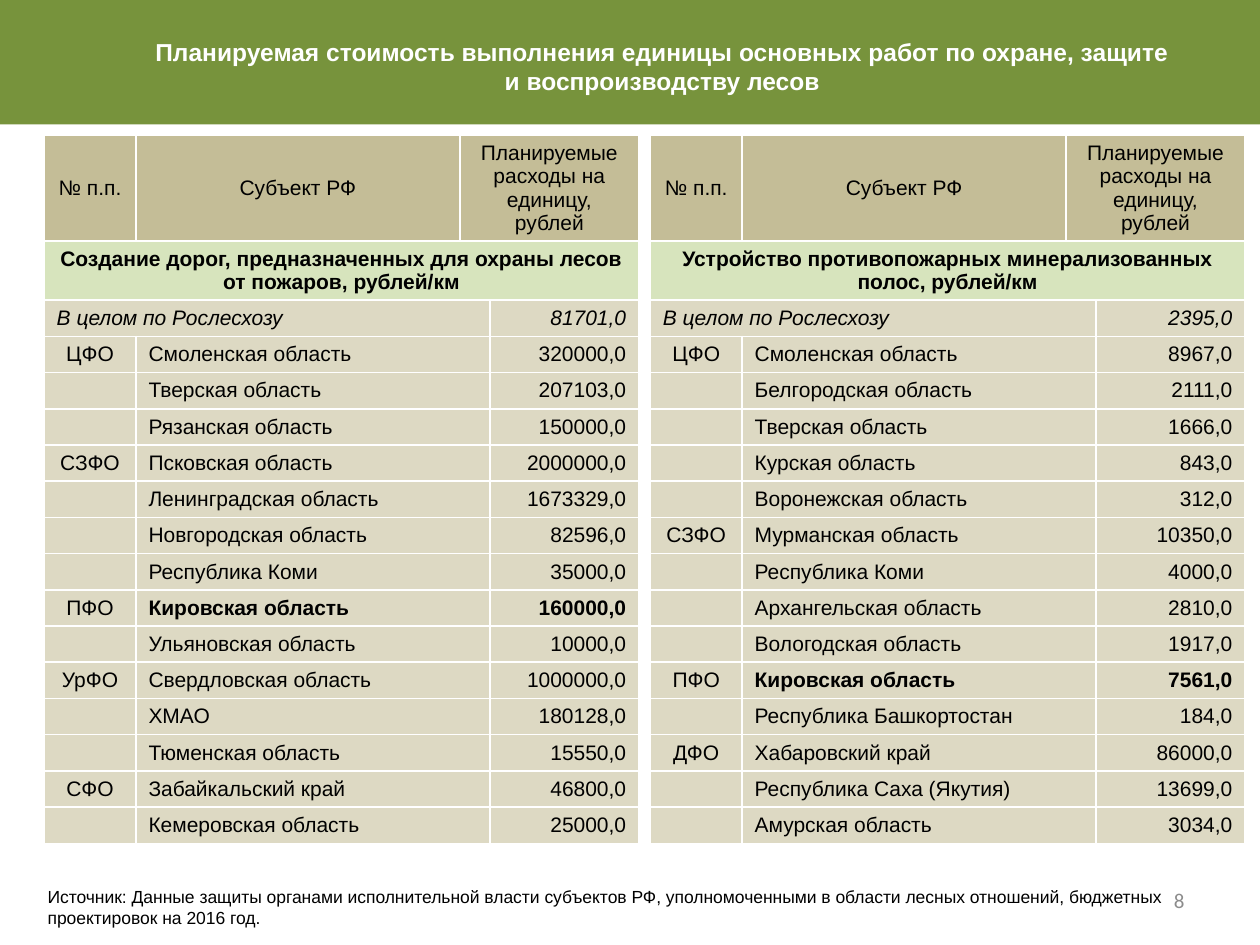
from collections import namedtuple
from dataclasses import dataclass

from pptx import Presentation
from pptx.dml.color import RGBColor
from pptx.enum.shapes import MSO_SHAPE
from pptx.enum.text import MSO_ANCHOR, PP_ALIGN
from pptx.util import Cm, Pt

Box = namedtuple("Box", "left top width height")


@dataclass(frozen=True)
class Theme:
    """Colours, fonts and type sizes of the slide."""
    band: str = "77933C"
    header: str = "C4BD97"
    work: str = "D7E4BD"
    body: str = "DDD9C3"
    ink: str = "000000"
    light: str = "FFFFFF"
    muted: str = "8C8C8C"
    font: str = "Arial"
    number_font: str = "Calibri"
    title_size: int = 14
    table_size: int = 12
    source_size: int = 10


THEME = Theme()
COLUMN_WIDTHS = (1.85, 6.53, 0.41, 3.0)
HEADER_HEIGHT, WORK_HEIGHT, ROW_HEIGHT = 2.14, 1.19, 0.73
HEADINGS = ("№ п.п.", "Субъект РФ", "Планируемые расходы на единицу, рублей")
TOTAL_LABEL = "В целом по Рослесхозу"
HIGHLIGHT = "Кировская область"
TITLE = ("Планируемая стоимость выполнения единицы основных работ по охране, защите\n"
         "и воспроизводству лесов")
SOURCE = ("Источник: Данные защиты органами исполнительной власти субъектов РФ, "
          "уполномоченными в области лесных отношений, бюджетных проектировок на 2016 год.")

ROADS = {
    "ЦФО": [("Смоленская область", "320000,0"), ("Тверская область", "207103,0"),
            ("Рязанская область", "150000,0")],
    "СЗФО": [("Псковская область", "2000000,0"), ("Ленинградская область", "1673329,0"),
             ("Новгородская область", "82596,0"), ("Республика Коми", "35000,0")],
    "ПФО": [("Кировская область", "160000,0"), ("Ульяновская область", "10000,0")],
    "УрФО": [("Свердловская область", "1000000,0"), ("ХМАО", "180128,0"),
             ("Тюменская область", "15550,0")],
    "СФО": [("Забайкальский край", "46800,0"), ("Кемеровская область", "25000,0")],
}
FIRE_STRIPS = {
    "ЦФО": [("Смоленская область", "8967,0"), ("Белгородская область", "2111,0"),
            ("Тверская область", "1666,0"), ("Курская область", "843,0"),
            ("Воронежская область", "312,0")],
    "СЗФО": [("Мурманская область", "10350,0"), ("Республика Коми", "4000,0"),
             ("Архангельская область", "2810,0"), ("Вологодская область", "1917,0")],
    "ПФО": [("Кировская область", "7561,0"), ("Республика Башкортостан", "184,0")],
    "ДФО": [("Хабаровский край", "86000,0"), ("Республика Саха (Якутия)", "13699,0"),
            ("Амурская область", "3034,0")],
}


def style_text(frame, size, color, align, font=THEME.font, bold=False, italic=False):
    """Format every paragraph and run of a text frame."""
    for paragraph in frame.paragraphs:
        paragraph.alignment = align
        for run in paragraph.runs:
            run.font.name, run.font.size = font, Pt(size)
            run.font.bold, run.font.italic = bold, italic
            run.font.color.rgb = RGBColor.from_string(color)


def add_text(slide, box, text, anchor, **style):
    """Place a wrapping text box in the given box."""
    frame = slide.shapes.add_textbox(*map(Cm, box)).text_frame
    frame.word_wrap = True
    frame.vertical_anchor = anchor
    frame.text = text
    style_text(frame, **style)


def add_title(slide, box):
    """Draw the title band with its heading."""
    band = slide.shapes.add_shape(MSO_SHAPE.RECTANGLE, *map(Cm, box))
    band.shadow.inherit = False
    band.fill.solid()
    band.fill.fore_color.rgb = RGBColor.from_string(THEME.band)
    band.line.fill.background()
    heading_box = Box(box.left + 1.3, box.top + 0.33, box.width - 1.3, box.height - 0.51)
    add_text(slide, heading_box, TITLE, MSO_ANCHOR.MIDDLE, size=THEME.title_size,
             color=THEME.light, align=PP_ALIGN.CENTER, bold=True)


def fill_cell(cell, text, fill, align, bold=False, italic=False):
    """Write, colour and align one table cell."""
    cell.fill.solid()
    cell.fill.fore_color.rgb = RGBColor.from_string(fill)
    cell.vertical_anchor = MSO_ANCHOR.MIDDLE
    cell.margin_top = cell.margin_bottom = Cm(0.1)
    if text:
        cell.text_frame.text = text
        style_text(cell.text_frame, THEME.table_size, THEME.ink, align, bold=bold, italic=italic)
    else:
        ending = cell.text_frame.paragraphs[0]._p.get_or_add_endParaRPr()
        ending.set("sz", str(THEME.table_size * 100))


def add_cost_table(slide, box, work, total, districts):
    """Draw the unit cost table of one kind of work, grouped by district."""
    regions = [(district if index == 0 else "", name, cost)
               for district, rows in districts.items()
               for index, (name, cost) in enumerate(rows)]
    heights = [HEADER_HEIGHT, WORK_HEIGHT] + [ROW_HEIGHT] * (len(regions) + 1)
    table = slide.shapes.add_table(len(heights), len(COLUMN_WIDTHS), *map(Cm, box)).table
    table.horz_banding = False
    for column, width in zip(table.columns, COLUMN_WIDTHS):
        column.width = Cm(width)
    for row, height in zip(table.rows, heights):
        row.height = Cm(height)

    def merge(row, first, last):
        table.cell(row, first).merge(table.cell(row, last))

    merge(0, 2, 3)
    for column, heading in enumerate(HEADINGS):
        fill_cell(table.cell(0, column), heading, THEME.header, PP_ALIGN.CENTER)
    merge(1, 0, 3)
    fill_cell(table.cell(1, 0), work, THEME.work, PP_ALIGN.CENTER, bold=True)
    merge(2, 0, 2)
    fill_cell(table.cell(2, 0), TOTAL_LABEL, THEME.body, PP_ALIGN.JUSTIFY, italic=True)
    fill_cell(table.cell(2, 3), total, THEME.body, PP_ALIGN.RIGHT, italic=True)
    for row, (district, name, cost) in enumerate(regions, start=3):
        merge(row, 1, 2)
        bold = name == HIGHLIGHT
        fill_cell(table.cell(row, 0), district, THEME.body, PP_ALIGN.CENTER)
        fill_cell(table.cell(row, 1), name, THEME.body, PP_ALIGN.JUSTIFY, bold=bold)
        fill_cell(table.cell(row, 3), cost, THEME.body, PP_ALIGN.RIGHT, bold=bold)


def add_footer(slide, box):
    """Place the source line and the slide number."""
    number_box = Box(box.left + 17.5, box.top - 0.08, 5.92, 1.01)
    add_text(slide, number_box, "8", MSO_ANCHOR.MIDDLE, size=THEME.table_size,
             color=THEME.muted, align=PP_ALIGN.RIGHT, font=THEME.number_font)
    add_text(slide, box, SOURCE, MSO_ANCHOR.TOP, size=THEME.source_size,
             color=THEME.ink, align=PP_ALIGN.LEFT)


def main():
    """Build and save the slide."""
    presentation = Presentation()
    presentation.slide_width, presentation.slide_height = Cm(25.4), Cm(19.05)
    slide = presentation.slides.add_slide(presentation.slide_layouts[6])
    add_cost_table(slide, Box(0.89, 2.72, 11.79, 14.28),
                   "Создание дорог, предназначенных для охраны лесов от пожаров, рублей/км",
                   "81701,0", ROADS)
    add_cost_table(slide, Box(13.11, 2.72, 11.79, 14.28),
                   "Устройство противопожарных минерализованных полос, рублей/км",
                   "2395,0", FIRE_STRIPS)
    add_footer(slide, Box(0.71, 17.73, 24.41, 1.12))
    add_title(slide, Box(0, 0, 25.4, 2.51))
    presentation.save("out.pptx")


if __name__ == "__main__":
    main()
